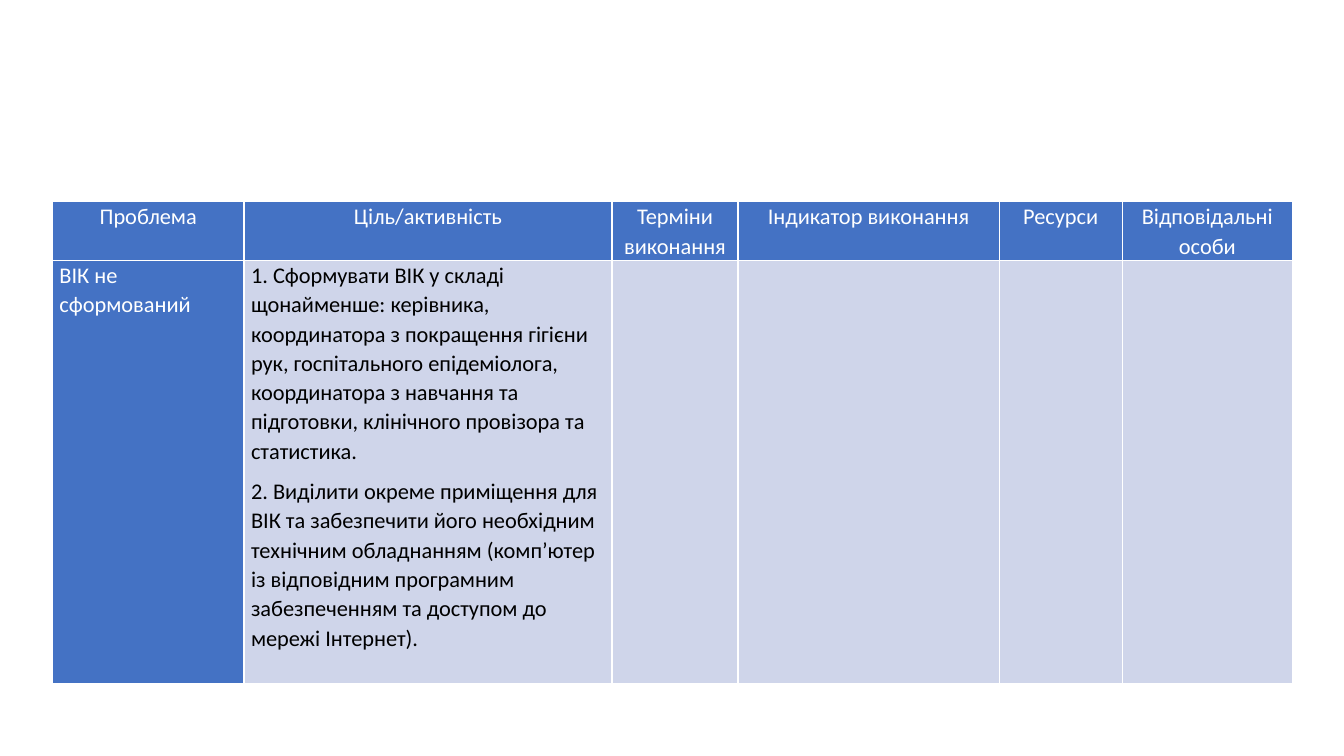
"""Build the action plan table slide for the infection control team."""
from dataclasses import dataclass

from lxml.etree import SubElement
from pptx import Presentation
from pptx.dml.color import RGBColor
from pptx.enum.text import PP_ALIGN as Align
from pptx.oxml.ns import qn
from pptx.table import _Cell as Cell
from pptx.util import Inches, Pt

BLUE, PALE, WHITE, BLACK = "4472C4", "CFD5EA", "FFFFFF", "000000"
ROW_HEIGHTS = (0.49, 4.2)


@dataclass
class Column:
    title: str
    width: float
    entries: tuple[str, ...] = ()
    fill: str = PALE
    color: str = BLACK


COLUMNS = [
    Column("Проблема", 1.9, ("ВІК не сформований",), BLUE, WHITE),
    Column("Ціль/активність", 3.65, (
        "1. Сформувати ВІК у складі щонайменше: керівника, координатора "
        "з покращення гігієни рук, госпітального епідеміолога, координатора "
        "з навчання та підготовки, клінічного провізора та статистика.",
        "2. Виділити окреме приміщення для ВІК та забезпечити його необхідним "
        "технічним обладнанням (комп’ютер із відповідним програмним "
        "забезпеченням та доступом до мережі Інтернет).",
    )),
    Column("Терміни виконання", 1.25),
    Column("Індикатор виконання", 2.59),
    Column("Ресурси", 1.22),
    Column("Відповідальні особи", 1.69),
]


def rgb(value: str) -> RGBColor:
    return RGBColor.from_string(value)


def add_borders(cell: Cell, color: str = WHITE, width: float = 1) -> None:
    tc_pr = cell._tc.get_or_add_tcPr()
    for side in ("lnL", "lnR", "lnT", "lnB"):
        ln = SubElement(tc_pr, qn(f"a:{side}"), w=str(Pt(width)))
        fill = SubElement(ln, qn("a:solidFill"))
        SubElement(fill, qn("a:srgbClr"), val=color)


def fill_cell(cell: Cell, texts: tuple[str, ...], *, fill: str, color: str,
              align: Align = Align.LEFT) -> None:
    add_borders(cell)
    cell.fill.solid()
    cell.fill.fore_color.rgb = rgb(fill)
    cell.margin_left = cell.margin_right = Inches(0.07)
    cell.margin_top = cell.margin_bottom = 0
    tf = cell.text_frame
    for i, text in enumerate(texts):
        p = tf.add_paragraph() if i else tf.paragraphs[0]
        p.alignment = align
        p.line_spacing = 1.07
        p.space_after = Pt(8)
        r = p.add_run()
        r.text = text
        r.font.name = "Calibri"
        r.font.size = Pt(16)
        r.font.bold = False
        r.font.color.rgb = rgb(color)


def main() -> None:
    prs = Presentation()
    prs.slide_width, prs.slide_height = Inches(13.33), Inches(7.5)
    s = prs.slides.add_slide(prs.slide_layouts[6])
    width = sum(column.width for column in COLUMNS)
    table = s.shapes.add_table(
        len(ROW_HEIGHTS), len(COLUMNS), Inches(0.52), Inches(2),
        Inches(width), Inches(sum(ROW_HEIGHTS))).table
    table.first_col = True
    for row, height in zip(table.rows, ROW_HEIGHTS):
        row.height = Inches(height)
    for i, column in enumerate(COLUMNS):
        table.columns[i].width = Inches(column.width)
        fill_cell(table.cell(0, i), (column.title,), fill=BLUE, color=WHITE,
                  align=Align.CENTER)
        fill_cell(table.cell(1, i), column.entries, fill=column.fill,
                  color=column.color)
    prs.save("out.pptx")


if __name__ == "__main__":
    main()
